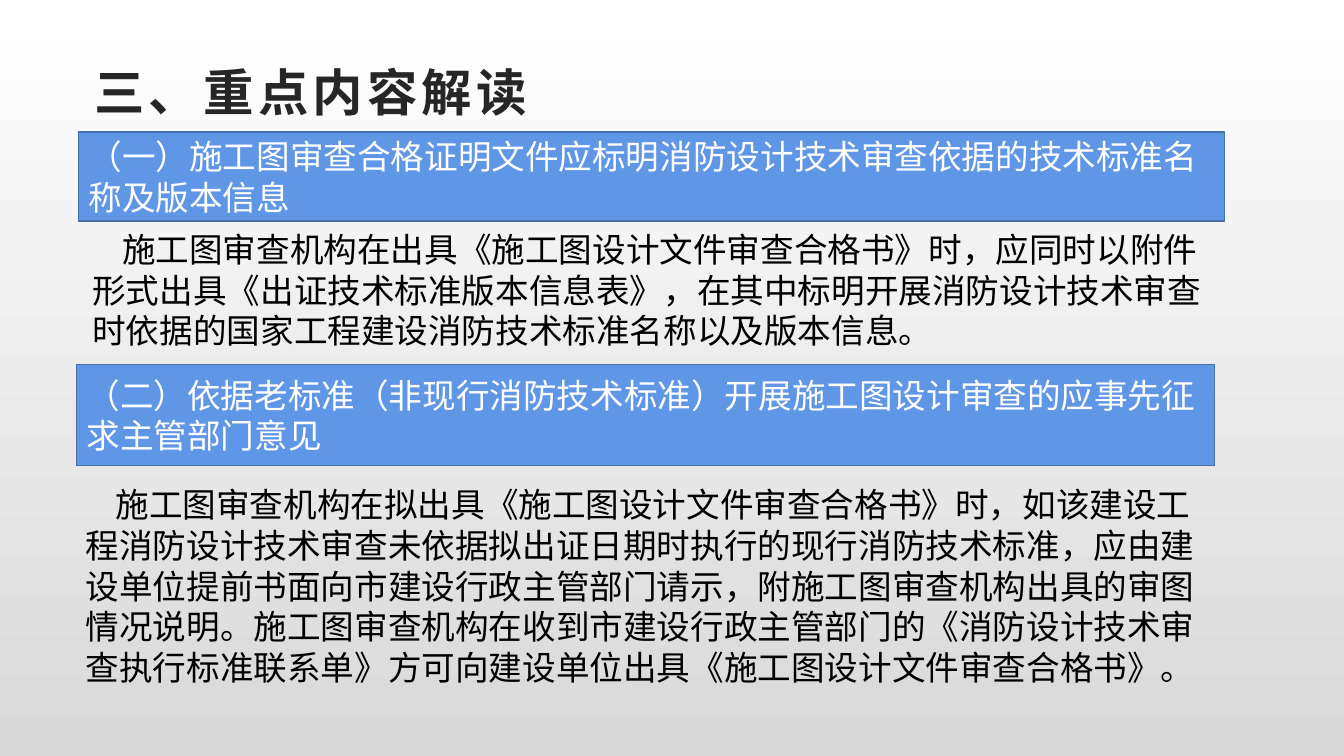
import pptx
import pptx.util
import pptx.dml.color
import pptx.enum.shapes
import pptx.enum.text
import pptx.oxml.ns
from dataclasses import dataclass
from lxml import etree

Cm = pptx.util.Cm
Pt = pptx.util.Pt
LEFT = pptx.enum.text.PP_ALIGN.LEFT
MIDDLE = pptx.enum.text.MSO_ANCHOR.MIDDLE
TOP = pptx.enum.text.MSO_ANCHOR.TOP

HEADING = "三、重点内容解读"
HEADING_AREA = (1.68, 1.35, 30.48, 1.88)

SECTIONS = [
    {
        "topic": "（一）施工图审查合格证明文件应标明消防设计技术审查依据的技术标准名称及版本信息",
        "topic_area": (1.98, 3.33, 28.88, 2.24),
        "detail": "施工图审查机构在出具《施工图设计文件审查合格书》时，应同时以附件形式出具《出证技术标准版本信息表》，"
                  "在其中标明开展消防设计技术审查时依据的国家工程建设消防技术标准名称以及版本信息。",
        "detail_area": (2.08, 5.64, 28.78, 3.33),
    },
    {
        "topic": "（二）依据老标准（非现行消防技术标准）开展施工图设计审查的应事先征求主管部门意见",
        "topic_area": (1.93, 9.19, 28.68, 2.54),
        "detail": "施工图审查机构在拟出具《施工图设计文件审查合格书》时，如该建设工程消防设计技术审查未依据拟出证日期时执行的"
                  "现行消防技术标准，应由建设单位提前书面向市建设行政主管部门请示，附施工图审查机构出具的审图情况说明。"
                  "施工图审查机构在收到市建设行政主管部门的《消防设计技术审查执行标准联系单》方可向建设单位出具"
                  "《施工图设计文件审查合格书》。",
        "detail_area": (1.91, 12.07, 28.68, 5.38),
    },
]


@dataclass(frozen=True)
class Theme:
    heading_font: str = "Arial"
    body_font: str = "Noto Sans CJK SC"
    heading_size: int = 36
    body_size: int = 24
    line_pitch: int = 29
    heading_color: str = "262626"
    band_text: str = "FFFFFF"
    detail_text: str = "000000"
    band_fill: str = "6096E6"
    band_line: str = "476FAA"
    backdrop: tuple = ("FFFFFF", "D9D9D9")


THEME = Theme()


def rgb(value):
    return pptx.dml.color.RGBColor.from_string(value)


def lengths(area):
    return [Cm(value) for value in area]


def write(frame, words, font, size, color, anchor):
    frame.word_wrap = True
    frame.vertical_anchor = anchor
    paragraph = frame.paragraphs[0]
    paragraph.alignment = LEFT
    run = paragraph.add_run()
    run.text = words
    run.font.name = font
    run.font.size = Pt(size)
    run.font.color.rgb = rgb(color)
    east_asian = etree.Element(pptx.oxml.ns.qn("a:ea"), typeface=THEME.body_font)
    run.font._element.find(pptx.oxml.ns.qn("a:latin")).addnext(east_asian)
    return paragraph, run


def add_heading(slide):
    heading = slide.shapes.title
    heading.left, heading.top, heading.width, heading.height = lengths(HEADING_AREA)
    frame = heading.text_frame
    frame.margin_left = Cm(0.7)
    _, run = write(frame, HEADING, THEME.heading_font, THEME.heading_size, THEME.heading_color, MIDDLE)
    run.font.bold = True
    run.font._element.set("spc", "300")


def add_topic(slide, words, area):
    band = slide.shapes.add_shape(pptx.enum.shapes.MSO_SHAPE.RECTANGLE, *lengths(area))
    band.shadow.inherit = False
    band.fill.solid()
    band.fill.fore_color.rgb = rgb(THEME.band_fill)
    band.line.color.rgb = rgb(THEME.band_line)
    band.line.width = Pt(1)
    paragraph, _ = write(band.text_frame, words, THEME.body_font, THEME.body_size, THEME.band_text, MIDDLE)
    paragraph.line_spacing = Pt(THEME.line_pitch)


def add_detail(slide, words, area):
    detail = slide.shapes.add_textbox(*lengths(area))
    paragraph, _ = write(detail.text_frame, words, THEME.body_font, THEME.body_size, THEME.detail_text, TOP)
    paragraph.line_spacing = Pt(THEME.line_pitch)
    paragraph._p.get_or_add_pPr().set("indent", str(Cm(0.75)))


def main():
    deck = pptx.Presentation()
    deck.slide_width, deck.slide_height = Cm(33.87), Cm(19.05)
    slide = deck.slides.add_slide(deck.slide_layouts[5])
    backdrop = slide.background.fill
    backdrop.gradient()
    backdrop.gradient_angle = 270
    for stop, color in zip(backdrop.gradient_stops, THEME.backdrop):
        stop.color.rgb = rgb(color)
    add_heading(slide)
    for section in SECTIONS:
        add_topic(slide, section["topic"], section["topic_area"])
        add_detail(slide, section["detail"], section["detail_area"])
    deck.save("out.pptx")


if __name__ == "__main__":
    main()
